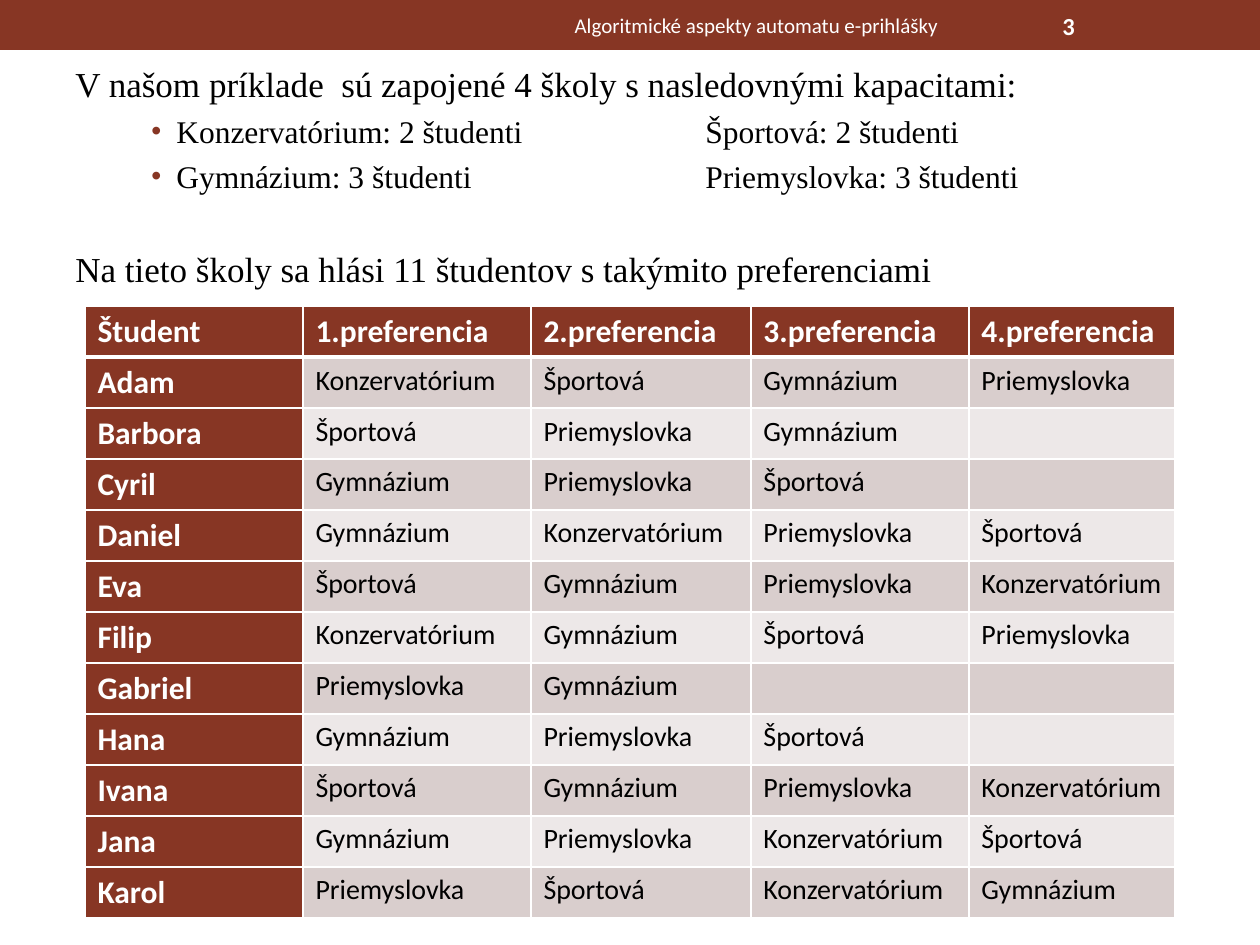
from lxml.etree import SubElement
from pptx import Presentation
from pptx.dml.color import RGBColor
from pptx.enum.shapes import MSO_SHAPE
from pptx.enum.text import MSO_ANCHOR, PP_ALIGN
from pptx.oxml.ns import qn
from pptx.util import Pt

RUST, WHITE, BLACK = "873624", "FFFFFF", "000000"
BANDS = ("D9CECD", "EDE8E8")
SANS, SERIF = "Calibri", "Times New Roman"
COLS = (218, 228, 220, 218, 206)
ROW = 51
K, S, G, P = "Konzervatórium", "Športová", "Gymnázium", "Priemyslovka"
HEAD = ("Študent", "1.preferencia", "2.preferencia", "3.preferencia", "4.preferencia")
PREFS = (
    ("Adam", K, S, G, P),
    ("Barbora", S, P, G, ""),
    ("Cyril", G, P, S, ""),
    ("Daniel", G, K, P, S),
    ("Eva", S, G, P, K),
    ("Filip", K, G, S, P),
    ("Gabriel", P, G, "", ""),
    ("Hana", G, P, S, ""),
    ("Ivana", S, G, P, K),
    ("Jana", G, P, K, S),
    ("Karol", P, S, K, G),
)


def px(n):
    return round(n * 914400 / 126)


def rgb(code):
    return RGBColor.from_string(code)


def add_run(para, text, size, color, font=SANS, bold=False):
    run = para.add_run()
    run.text = text
    run.font.size = Pt(size)
    run.font.name = font
    run.font.bold = bold
    run.font.color.rgb = rgb(color)


def add_box(slide, x, y, w, h):
    frame = slide.shapes.add_textbox(px(x), px(y), px(w), px(h)).text_frame
    frame.word_wrap = True
    return frame


def add_bar(slide):
    bar = slide.shapes.add_shape(MSO_SHAPE.RECTANGLE, 0, 0, px(1260), px(50))
    bar.shadow.inherit = False
    bar.fill.solid()
    bar.fill.fore_color.rgb = rgb(RUST)
    bar.line.fill.background()


def add_label(slide, x, w, text, size, align, bold=False):
    frame = add_box(slide, x, 3, w, 45)
    frame.vertical_anchor = MSO_ANCHOR.MIDDLE
    para = frame.paragraphs[0]
    para.alignment = align
    add_run(para, text, size, WHITE, bold=bold)


def set_bullet(para):
    """Give the paragraph a rust bullet, a hanging indent and one tab stop."""
    props = para._p.get_or_add_pPr()
    props.set("marL", str(px(101)))
    props.set("indent", str(px(-25)))
    color = SubElement(props, qn("a:buClr"))
    SubElement(color, qn("a:srgbClr"), val=RUST)
    SubElement(props, qn("a:buSzPct"), val="90000")
    SubElement(props, qn("a:buFont"), typeface="Arial")
    SubElement(props, qn("a:buChar"), char="•")
    tabs = SubElement(props, qn("a:tabLst"))
    SubElement(tabs, qn("a:tab"), pos=str(px(630)), algn="l")


def add_body(slide):
    frame = add_box(slide, 63, 53, 1134, 251)
    frame.margin_top = px(10)
    lines = (
        ("V našom príklade  sú zapojené 4 školy s nasledovnými kapacitami:", 20, 0, False),
        ("Konzervatórium: 2 študenti\tŠportová: 2 študenti", 18, 4, True),
        ("Gymnázium: 3 študenti\tPriemyslovka: 3 študenti", 18, 4, True),
        ("Na tieto školy sa hlási 11 študentov s takýmito preferenciami", 20, 30, False),
    )
    for i, (text, size, gap, listed) in enumerate(lines):
        para = frame.add_paragraph() if i else frame.paragraphs[0]
        if listed:
            set_bullet(para)
        para.space_before = Pt(gap)
        add_run(para, text, size, BLACK, SERIF)


def set_edges(cell, widths):
    """Draw white borders; widths maps each side to points."""
    props = cell._tc.get_or_add_tcPr()
    for i, (side, width) in enumerate(widths.items()):
        line = props.makeelement(qn("a:ln" + side), {"w": str(Pt(width))})
        fill = SubElement(line, qn("a:solidFill"))
        SubElement(fill, qn("a:srgbClr"), val=WHITE)
        props.insert(i, line)


def add_prefs(slide):
    rows = (HEAD,) + PREFS
    table = slide.shapes.add_table(
        len(rows), len(COLS), px(85), px(306), px(sum(COLS)), px(ROW * len(rows))
    ).table
    for col, width in zip(table.columns, COLS):
        col.width = px(width)
    for r, row in enumerate(rows):
        table.rows[r].height = px(ROW)
        for c, text in enumerate(row):
            cell = table.cell(r, c)
            title = r == 0 or c == 0
            cell.fill.solid()
            cell.fill.fore_color.rgb = rgb(RUST if title else BANDS[(r - 1) % 2])
            set_edges(cell, {"L": 1, "R": 1, "T": 3 if r == 1 else 1, "B": 3 if r == 0 else 1})
            if text:
                add_run(cell.text_frame.paragraphs[0], text, 18 if title else 16,
                        WHITE if title else BLACK, bold=title)


def main():
    deck = Presentation()
    deck.slide_width, deck.slide_height = px(1260), px(945)
    slide = deck.slides.add_slide(deck.slide_layouts[6])
    add_bar(slide)
    add_body(slide)
    add_label(slide, 1050, 147, "3", 14, PP_ALIGN.LEFT, bold=True)
    add_label(slide, 473, 567, "Algoritmické aspekty automatu e-prihlášky", 12, PP_ALIGN.CENTER)
    add_prefs(slide)
    deck.save("out.pptx")


if __name__ == "__main__":
    main()
